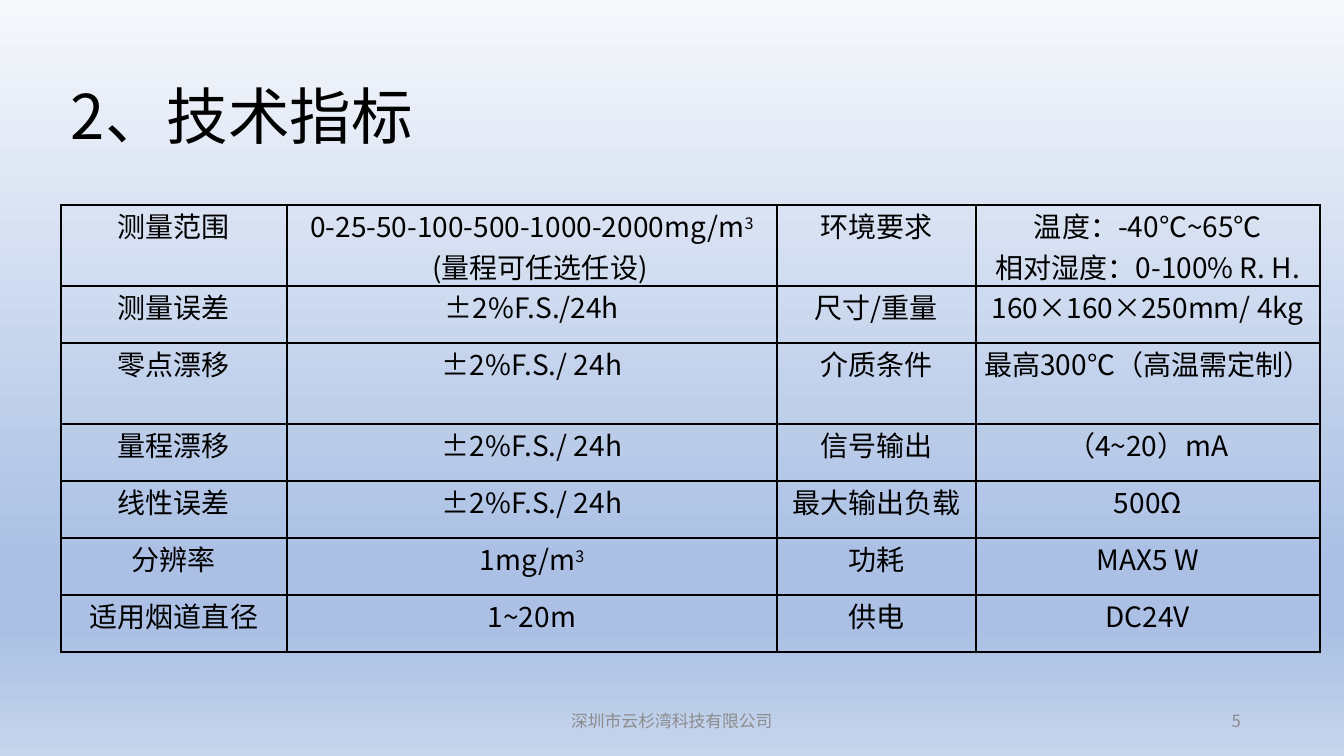
"""Build the technical specification slide with its table and footer."""
from dataclasses import dataclass

import pptx
import pptx.dml.color
import pptx.enum.text
import pptx.oxml
import pptx.oxml.ns
import pptx.util

ALIGN = pptx.enum.text.PP_ALIGN
ANCHOR = pptx.enum.text.MSO_ANCHOR


@dataclass(frozen=True)
class Theme:
    font: str = "Noto Sans CJK SC"
    ink: str = "000000"
    muted: str = "8C8C8C"
    title_size: int = 44
    table_size: int = 20
    footer_size: int = 12
    gradient: tuple = ((0, "F6F8FC"), (74, "ABC0E4"), (83, "ABC0E4"), (100, "C7D5ED"))


THEME = Theme()
COLUMN_WIDTHS = (226, 490, 199, 344)
ONE_LINE, TWO_LINES = 57, 81
ROW_HEIGHTS = (TWO_LINES, ONE_LINE, TWO_LINES) + (ONE_LINE,) * 4
SPECIFICATIONS = (
    ("测量范围", "0-25-50-100-500-1000-2000mg/m^3\n(量程可任选任设)",
     "环境要求", "温度：-40℃~65℃\n相对湿度：0-100% R. H."),
    ("测量误差", "±2%F.S./24h", "尺寸/重量", "160×160×250mm/ 4kg"),
    ("零点漂移", "±2%F.S./ 24h", "介质条件", "最高300℃（高温需定制）"),
    ("量程漂移", "±2%F.S./ 24h", "信号输出", "（4~20）mA"),
    ("线性误差", "±2%F.S./ 24h", "最大输出负载", "500Ω"),
    ("分辨率", "1mg/m^3", "功耗", "MAX5 W"),
    ("适用烟道直径", "1~20m", "供电", "DC24V"),
)


def px(length):
    return pptx.util.Emu(round(length * 914400 / 100.8))


def make_element(tag, **attributes):
    element = pptx.oxml.parse_xml(f"<{tag} {pptx.oxml.ns.nsdecls('a')}/>")
    for name, value in attributes.items():
        element.set(name, str(value))
    return element


def paint_background(slide):
    fill = slide.background.fill
    fill.gradient()
    fill.gradient_angle = 270
    stops = next(slide.element.iter(pptx.oxml.ns.qn("a:gsLst")))
    for stop in list(stops):
        stops.remove(stop)
    for position, color in THEME.gradient:
        stop = make_element("a:gs", pos=position * 1000)
        stop.append(make_element("a:srgbClr", val=color))
        stops.append(stop)


def write_paragraph(paragraph, text, size, color, align):
    """Write text in which ^ starts a superscript."""
    paragraph.alignment = align
    font = paragraph.font
    font.size = pptx.util.Pt(size)
    font.color.rgb = pptx.dml.color.RGBColor.from_string(color)
    font.name = THEME.font
    defaults = paragraph._p.pPr.find(pptx.oxml.ns.qn("a:defRPr"))
    defaults.append(make_element("a:ea", typeface=THEME.font))
    base, _, superscript = text.partition("^")
    paragraph.add_run().text = base
    if superscript:
        run = paragraph.add_run()
        run.text = superscript
        run._r.get_or_add_rPr().set("baseline", "30000")


def add_text(slide, box, text, size, color, align):
    shape = slide.shapes.add_textbox(*map(px, box))
    frame = shape.text_frame
    frame.word_wrap = True
    frame.vertical_anchor = ANCHOR.MIDDLE
    paragraph = frame.paragraphs[0]
    write_paragraph(paragraph, text, size, color, align)
    return paragraph


def add_borders(cell):
    properties = cell._tc.get_or_add_tcPr()
    for index, side in enumerate(("lnL", "lnR", "lnT", "lnB")):
        line = make_element(f"a:{side}", w=pptx.util.Pt(1))
        fill = make_element("a:solidFill")
        fill.append(make_element("a:srgbClr", val=THEME.ink))
        line.append(fill)
        properties.insert(index, line)


def fill_cell(cell, text):
    cell.margin_left = cell.margin_right = px(7)
    cell.margin_top = cell.margin_bottom = 0
    cell.fill.background()
    add_borders(cell)
    frame = cell.text_frame
    for index, line in enumerate(text.split("\n")):
        paragraph = frame.add_paragraph() if index else frame.paragraphs[0]
        write_paragraph(paragraph, line, THEME.table_size, THEME.ink, ALIGN.CENTER)
        if line.startswith("("):
            paragraph._p.pPr.set("indent", str(px(16)))


def add_specification_table(slide, left, top):
    frame = slide.shapes.add_table(
        len(ROW_HEIGHTS), len(COLUMN_WIDTHS), px(left), px(top),
        px(sum(COLUMN_WIDTHS)), px(sum(ROW_HEIGHTS)))
    table = frame.table
    table.first_row = table.horz_banding = False
    for column, width in zip(table.columns, COLUMN_WIDTHS):
        column.width = px(width)
    for row, height, values in zip(table.rows, ROW_HEIGHTS, SPECIFICATIONS):
        row.height = px(height)
        for cell, text in zip(row.cells, values):
            fill_cell(cell, text)


def main():
    presentation = pptx.Presentation()
    presentation.slide_width, presentation.slide_height = px(1344), px(756)
    slide = presentation.slides.add_slide(presentation.slide_layouts[6])
    paint_background(slide)
    title = add_text(slide, (61, 47, 1159, 146), "2、技术指标",
                     THEME.title_size, THEME.ink, ALIGN.LEFT)
    title.line_spacing = 0.9
    add_specification_table(slide, 61, 205)
    add_text(slide, (445, 701, 454, 40), "深圳市云杉湾科技有限公司",
             THEME.footer_size, THEME.muted, ALIGN.CENTER)
    add_text(slide, (949, 701, 302, 40), "5",
             THEME.footer_size, THEME.muted, ALIGN.RIGHT)
    presentation.save("out.pptx")


if __name__ == "__main__":
    main()
